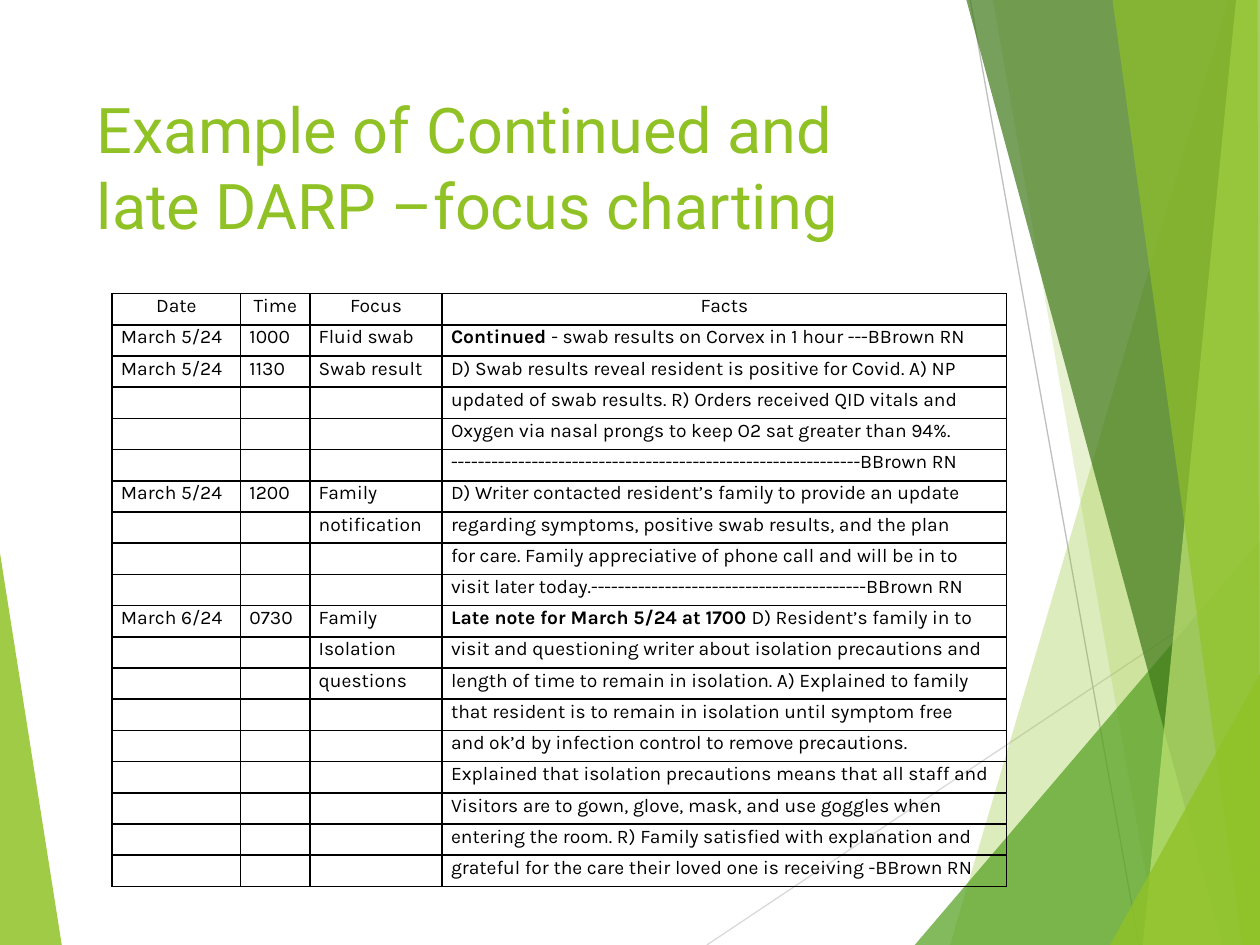
"""Build the slide on continued and late DARP focus charting."""
from lxml import etree
from pptx import Presentation
from pptx.dml.color import RGBColor
from pptx.enum.shapes import MSO_CONNECTOR
from pptx.enum.text import MSO_ANCHOR, PP_ALIGN
from pptx.oxml.ns import qn
from pptx.util import Inches, Pt

LINE = MSO_CONNECTOR.STRAIGHT
TOP = MSO_ANCHOR.TOP
LEFT, CENTER = PP_ALIGN.LEFT, PP_ALIGN.CENTER

TITLE = "Example of Continued and late DARP –focus charting"
LEAF = [("90C226", 85, [(0, 4.39), (0.49, 7.5), (0, 7.5)])]
RAYS = [
    ("D9D9D9", (5.61, 7.5), (10, 4.57)),
    ("BFBFBF", (7.7, 0), (9.04, 7.5)),
]
FACETS = [
    ("90C226", 30, [(9.75, 0), (7.54, 7.5), (10, 7.5), (10, 0)]),
    ("90C226", 20, [(7.88, 0), (9.19, 7.5), (10, 7.5), (10, 0)]),
    ("54A021", 72, [(7.26, 7.5), (10, 4.29), (10, 7.5)]),
    ("3F7819", 70, [(7.67, 0), (9.7, 7.5), (10, 7.5), (10, 0)]),
    ("C0E474", 70, [(9.81, 0), (9.07, 7.5), (10, 7.5), (10, 0)]),
    ("90C226", 65, [(8.83, 0), (9.86, 7.5), (10, 7.5), (9.98, 0)]),
    ("90C226", 80, [(8.81, 7.5), (10, 5.35), (10, 7.5)]),
]
COLS = [1.02, 0.55, 1.05, 4.48]
HIGH = 0.248
BOLD = ("Continued ", "Late note for March 5/24 at 1700")
ROWS = [
    ("Date", "Time", "Focus", "Facts"),
    ("March 5/24", "1000", "Fluid swab",
     "Continued - swab results on Corvex in 1 hour ---BBrown RN"),
    ("March 5/24", "1130", "Swab result",
     "D) Swab results reveal resident is positive for Covid. A) NP"),
    ("", "", "", "updated of swab results. R) Orders received QID vitals and"),
    ("", "", "", "Oxygen via nasal prongs to keep O2 sat greater than 94%."),
    ("", "", "", "-" * 61 + "BBrown RN"),
    ("March 5/24", "1200", "Family",
     "D) Writer contacted resident’s family to provide an update"),
    ("", "", "notification",
     "regarding symptoms, positive swab results, and the plan"),
    ("", "", "", "for care. Family appreciative of phone call and will be in to"),
    ("", "", "", "visit later today." + "-" * 41 + "BBrown RN"),
    ("March 6/24", "0730", "Family",
     "Late note for March 5/24 at 1700 D) Resident’s family in to"),
    ("", "", "Isolation",
     "visit and questioning writer about isolation precautions and"),
    ("", "", "questions",
     "length of time to remain in isolation. A) Explained to family"),
    ("", "", "", "that resident is to remain in isolation until symptom free"),
    ("", "", "", "and ok’d by infection control to remove precautions."),
    ("", "", "", "Explained that isolation precautions means that all staff and"),
    ("", "", "", "Visitors are to gown, glove, mask, and use goggles when"),
    ("", "", "", "entering the room. R) Family satisfied with explanation and"),
    ("", "", "", "grateful for the care their loved one is receiving -BBrown RN"),
]


def color(code):
    return RGBColor.from_string(code)


def style(run, size, face, code, bold=False):
    font = run.font
    font.size, font.name, font.bold = Pt(size), face, bold
    font.color.rgb = color(code)


def add_facet(shapes, code, alpha, points):
    spots = [(Inches(x), Inches(y)) for x, y in points]
    build = shapes.build_freeform(*spots[0], scale=1.0)
    build.add_line_segments(spots[1:], close=True)
    shape = build.convert_to_shape()
    shape.shadow.inherit = False
    shape.fill.solid()
    shape.fill.fore_color.rgb = color(code)
    shape.line.fill.background()
    tint = shape.fill._xPr.find(".//" + qn("a:srgbClr"))
    etree.SubElement(tint, qn("a:alpha"), val=str(alpha * 1000))


def add_ray(shapes, code, start, end):
    ray = shapes.add_connector(LINE, *map(Inches, start + end))
    ray.line.color.rgb = color(code)
    ray.line.width = Pt(0.75)
    etree.SubElement(ray._element.spPr, qn("a:effectLst"))


def add_title(shapes):
    box = shapes.add_textbox(*map(Inches, (0.67, 0.67, 6.94, 1.44)))
    frame = box.text_frame
    frame.word_wrap = True
    frame.vertical_anchor = TOP
    frame.text = TITLE
    style(frame.paragraphs[0].runs[0], 36, "Roboto", "90C226")


def add_borders(cell):
    props = cell._tc.get_or_add_tcPr()
    for spot, side in enumerate(("lnL", "lnR", "lnT", "lnB")):
        edge = etree.Element(qn("a:" + side), w=str(Pt(1)))
        fill = etree.SubElement(edge, qn("a:solidFill"))
        etree.SubElement(fill, qn("a:srgbClr"), val="000000")
        props.insert(spot, edge)


def fill_cell(cell, text, align):
    cell.fill.background()
    cell.margin_left = cell.margin_right = Inches(0.07)
    cell.margin_top = cell.margin_bottom = 0
    add_borders(cell)
    para = cell.text_frame.paragraphs[0]
    para.alignment = align
    para.line_spacing = 1.07
    para.space_after = Pt(8)
    lead = next((b for b in BOLD if text.startswith(b)), "")
    for part, bold in ((lead, True), (text[len(lead):], False)):
        if part:
            run = para.add_run()
            run.text = part
            style(run, 11, "Karla", "000000", bold)
    if not text:
        end = etree.SubElement(para._p, qn("a:endParaRPr"), sz="1100")
        etree.SubElement(end, qn("a:latin"), typeface="Karla")


def add_chart_notes(shapes):
    size = (0.89, 2.33, sum(COLS), HIGH * len(ROWS))
    frame = shapes.add_table(len(ROWS), len(COLS), *map(Inches, size))
    table = frame.table
    table.first_row = table.horz_banding = False
    for col, width in zip(table.columns, COLS):
        col.width = Inches(width)
    for r, texts in enumerate(ROWS):
        table.rows[r].height = Inches(HIGH)
        for c, text in enumerate(texts):
            fill_cell(table.cell(r, c), text, LEFT if r else CENTER)


def main():
    deck = Presentation()
    deck.slide_width, deck.slide_height = Inches(10), Inches(7.5)
    shapes = deck.slides.add_slide(deck.slide_layouts[6]).shapes
    for leaf in LEAF:
        add_facet(shapes, *leaf)
    for ray in RAYS:
        add_ray(shapes, *ray)
    for facet in FACETS:
        add_facet(shapes, *facet)
    add_title(shapes)
    add_chart_notes(shapes)
    deck.save("out.pptx")


if __name__ == "__main__":
    main()
